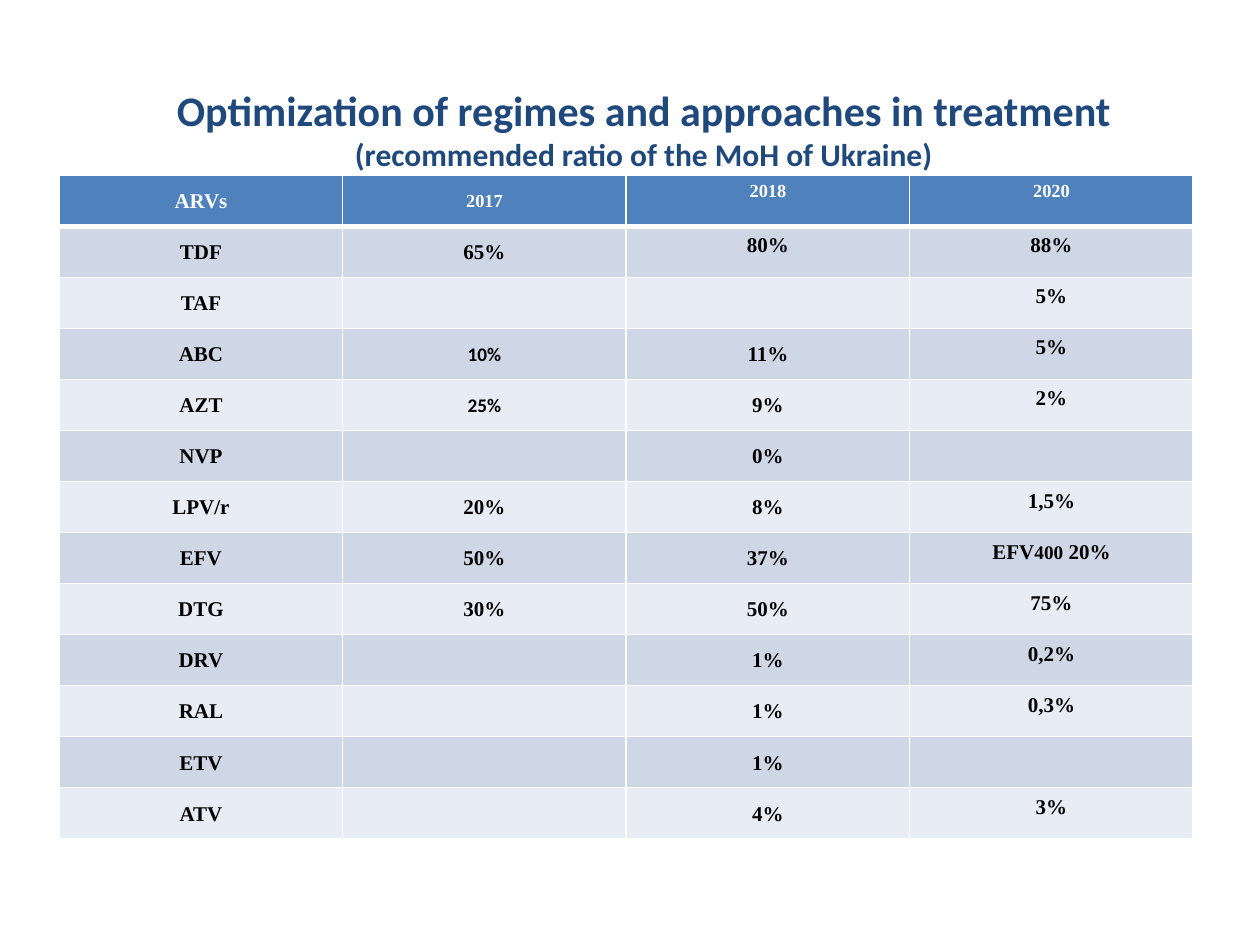
from lxml import etree
from pptx import Presentation
from pptx.dml.color import RGBColor
from pptx.enum.text import MSO_ANCHOR, PP_ALIGN
from pptx.oxml.ns import qn
from pptx.util import Inches, Pt

CENTER = PP_ALIGN.CENTER
TOP, MIDDLE = MSO_ANCHOR.TOP, MSO_ANCHOR.MIDDLE
SERIF, SANS = "Times New Roman", "Calibri"
NAVY, BLUE, WHITE, BLACK = "1F497D", "4F81BD", "FFFFFF", "000000"
BANDS = ("CFD7E7", "E8ECF4")
TABLE_HEIGHT = Inches(5.27)

RATIOS = [
    ("ARVs", "2017", "2018", "2020"),
    ("TDF", "65%", "80%", "88%"),
    ("TAF", "", "", "5%"),
    ("ABC", "10%", "11%", "5%"),
    ("AZT", "25%", "9%", "2%"),
    ("NVP", "", "0%", ""),
    ("LPV/r", "20%", "8%", "1,5%"),
    ("EFV", "50%", "37%", ("EFV", "400", " 20%")),
    ("DTG", "30%", "50%", "75%"),
    ("DRV", "", "1%", "0,2%"),
    ("RAL", "", "1%", "0,3%"),
    ("ETV", "", "1%", ""),
    ("ATV", "", "4%", "3%"),
]
SANS_CELLS = {(3, 1), (4, 1)}
TOP_CELLS = {(0, 2), (1, 2)}


def rgb(color):
    return RGBColor.from_string(color)


def set_font(font, size, name, color):
    font.size, font.name, font.bold = Pt(size), name, True
    font.color.rgb = rgb(color)


def add_title(page, heading, subheading):
    box = page.shapes.add_textbox(Inches(0.5), Inches(0.3), Inches(9.22), Inches(1.72))
    frame = box.text_frame
    frame.word_wrap = True
    frame.vertical_anchor = MIDDLE
    frame.margin_bottom = Inches(0.33)  # lifts the text clear of the table
    para = frame.paragraphs[0]
    para.alignment = CENTER
    for text, size in ((heading, 24), (subheading, 18)):
        if para.runs:
            para.add_line_break()
        span = para.add_run()
        span.text = text
        set_font(span.font, size, SANS, NAVY)


def set_borders(cell, top, bottom):
    properties = cell._tc.get_or_add_tcPr()
    for side, width in (("L", 1), ("R", 1), ("T", top), ("B", bottom)):
        line = etree.SubElement(properties, qn(f"a:ln{side}"), w=str(Pt(width)))
        fill = etree.SubElement(line, qn("a:solidFill"))
        etree.SubElement(fill, qn("a:srgbClr"), val=WHITE)


def style_cell(cell, row, column):
    # The rule under the header is thicker than the others
    set_borders(cell, 3 if row == 1 else 1, 3 if row == 0 else 1)
    cell.fill.solid()
    cell.fill.fore_color.rgb = rgb(BANDS[(row - 1) % 2] if row else BLUE)
    at_top = column == 3 or (row, column) in TOP_CELLS
    cell.vertical_anchor = TOP if at_top else MIDDLE
    cell.margin_left = cell.margin_right = Inches(0.1 if at_top else 0.07)
    cell.margin_top = cell.margin_bottom = Inches(0.05 if at_top else 0)


def fill_cell(cell, content, row, column):
    para = cell.text_frame.paragraphs[0]
    para.alignment = CENTER
    if row or column < 2:
        para.line_spacing = 1.07
    sans = (row, column) in SANS_CELLS
    size = 11 if sans else 10.5 if row == 0 and column else 12
    set_font(para.font, size, SANS if sans else SERIF, BLACK if row else WHITE)
    parts = (content,) if isinstance(content, str) else content
    for part in filter(None, parts):
        span = para.add_run()
        span.text = part
        if part == "400":  # dose in smaller type
            span.font.size = Pt(11)


def add_ratio_table(page):
    count = len(RATIOS)
    table = page.shapes.add_table(
        count, 4, Inches(0.47), Inches(1.39), Inches(9), TABLE_HEIGHT
    ).table
    for row, contents in enumerate(RATIOS):
        table.rows[row].height = TABLE_HEIGHT // count
        for column, content in enumerate(contents):
            cell = table.cell(row, column)
            style_cell(cell, row, column)
            fill_cell(cell, content, row, column)


def main():
    deck = Presentation()
    deck.slide_width, deck.slide_height = Inches(10), Inches(7.5)
    page = deck.slides.add_slide(deck.slide_layouts[6])
    add_title(
        page,
        "Optimization of regimes and approaches in treatment",
        "(recommended ratio of the MoH of Ukraine)",
    )
    add_ratio_table(page)
    deck.save("out.pptx")


if __name__ == "__main__":
    main()
